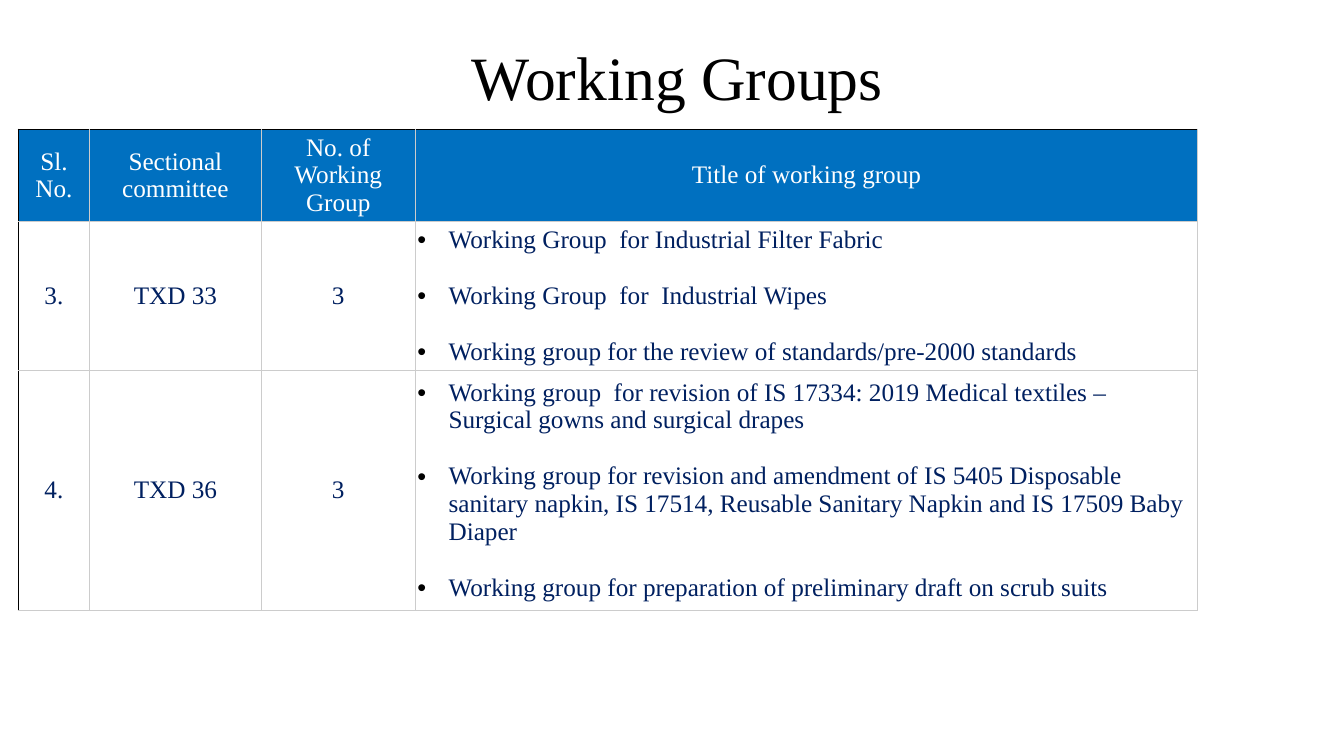
from lxml import etree
from pptx import Presentation
from pptx.dml.color import RGBColor
from pptx.enum.text import MSO_ANCHOR, PP_ALIGN
from pptx.oxml.ns import qn
from pptx.util import Inches, Pt

# Content
TITLE = "Working Groups"
HEADINGS = ["Sl. No.", "Sectional committee", "No. of Working Group", "Title of working group"]
COMMITTEES = [
    ("3.", "TXD 33", "3", [
        "Working Group  for Industrial Filter Fabric",
        "Working Group  for  Industrial Wipes",
        "Working group for the review of standards/pre-2000 standards",
    ]),
    ("4.", "TXD 36", "3", [
        "Working group  for revision of IS 17334: 2019 Medical textiles – "
        "Surgical gowns and surgical drapes",
        "Working group for revision and amendment of IS 5405 Disposable sanitary napkin, "
        "IS 17514, Reusable Sanitary Napkin and IS 17509 Baby Diaper",
        "Working group for preparation of preliminary draft on scrub suits",
    ]),
]
COLUMN_WIDTHS = [0.71, 1.7, 1.53, 7.76]
ROW_HEIGHTS = [0.85, 1.4, 2.24]
FONT = "Times New Roman"
COLORS = {"black": "000000", "white": "FFFFFF", "header": "0070C0",
          "body": "002060", "grid": "CCCCCC"}


def add_run(paragraph, text, size, color):
    run = paragraph.add_run()
    run.text = text
    run.font.name = FONT
    run.font.size = Pt(size)
    run.font.color.rgb = RGBColor.from_string(COLORS[color])


def add_color(parent, color):
    etree.SubElement(parent, qn("a:srgbClr"), val=COLORS[color])


def add_bullet(paragraph):
    properties = paragraph._p.get_or_add_pPr()
    properties.set("marL", str(Inches(0.31)))
    properties.set("indent", str(-Inches(0.31)))
    add_color(etree.SubElement(properties, qn("a:buClr")), "black")
    etree.SubElement(properties, qn("a:buFont"), typeface="Arial")
    etree.SubElement(properties, qn("a:buChar"), char="•")


def add_borders(cell, row, column):
    properties = cell._tc.get_or_add_tcPr()
    for side in "LRTB":
        outer = (side == "L" and column == 0) or (side == "T" and row == 0)
        line = etree.SubElement(properties, qn(f"a:ln{side}"), w=str(Pt(0.75)))
        add_color(etree.SubElement(line, qn("a:solidFill")), "black" if outer else "grid")


def fill_cell(cell, row, column, content):
    cell.vertical_anchor = MSO_ANCHOR.MIDDLE
    cell.margin_left = cell.margin_right = Inches(0.02)
    cell.margin_top = cell.margin_bottom = Inches(0.01)
    add_borders(cell, row, column)
    if row == 0:
        cell.fill.solid()
        cell.fill.fore_color.rgb = RGBColor.from_string(COLORS["header"])
    else:
        cell.fill.background()
    bulleted = isinstance(content, list)
    frame = cell.text_frame
    for index, text in enumerate(content if bulleted else [content]):
        paragraph = frame.add_paragraph() if index else frame.paragraphs[0]
        paragraph.alignment = PP_ALIGN.LEFT if bulleted else PP_ALIGN.CENTER
        if index:
            paragraph.space_before = Pt(20)
        if bulleted:
            add_bullet(paragraph)
        add_run(paragraph, text, 18, "body" if row else "white")


def main():
    deck = Presentation()
    deck.slide_width, deck.slide_height = Inches(13.33), Inches(7.5)
    slide = deck.slides.add_slide(deck.slide_layouts[6])

    # Title
    title = slide.shapes.add_textbox(
        Inches(0.49), Inches(0.4), Inches(12.46), Inches(0.79)).text_frame
    title.word_wrap = True
    title.vertical_anchor = MSO_ANCHOR.MIDDLE
    heading = title.paragraphs[0]
    heading.alignment = PP_ALIGN.CENTER
    heading.line_spacing = 0.9
    add_run(heading, TITLE, 44, "black")

    # Table of working groups
    rows = [HEADINGS, *COMMITTEES]
    groups = slide.shapes.add_table(
        len(rows), len(HEADINGS), Inches(0.18), Inches(1.28),
        Inches(sum(COLUMN_WIDTHS)), Inches(sum(ROW_HEIGHTS))).table
    groups.first_row = groups.horz_banding = False
    for column, width in zip(groups.columns, COLUMN_WIDTHS):
        column.width = Inches(width)
    for row, height in zip(groups.rows, ROW_HEIGHTS):
        row.height = Inches(height)
    for r, contents in enumerate(rows):
        for c, content in enumerate(contents):
            fill_cell(groups.cell(r, c), r, c, content)

    deck.save("out.pptx")


if __name__ == "__main__":
    main()
